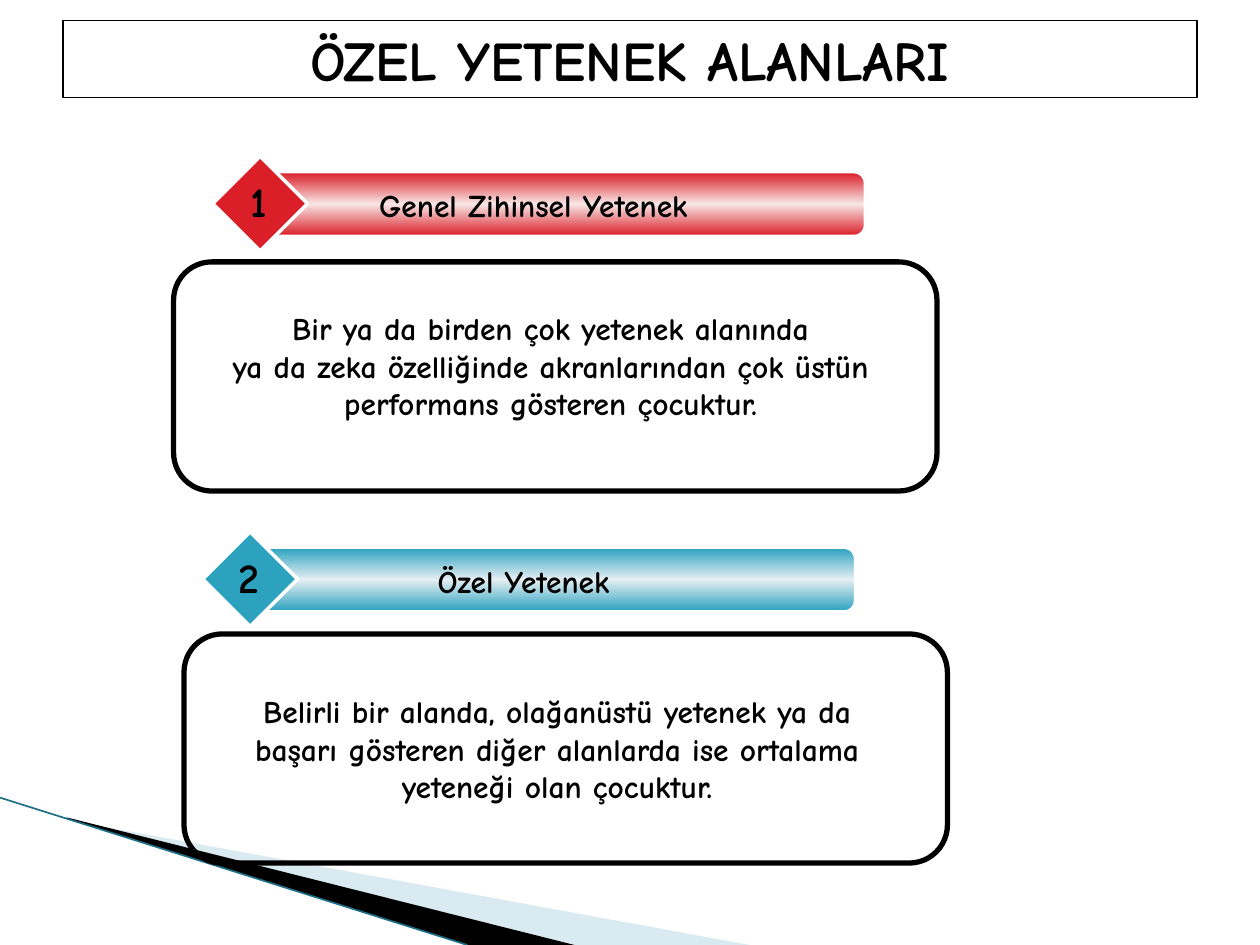
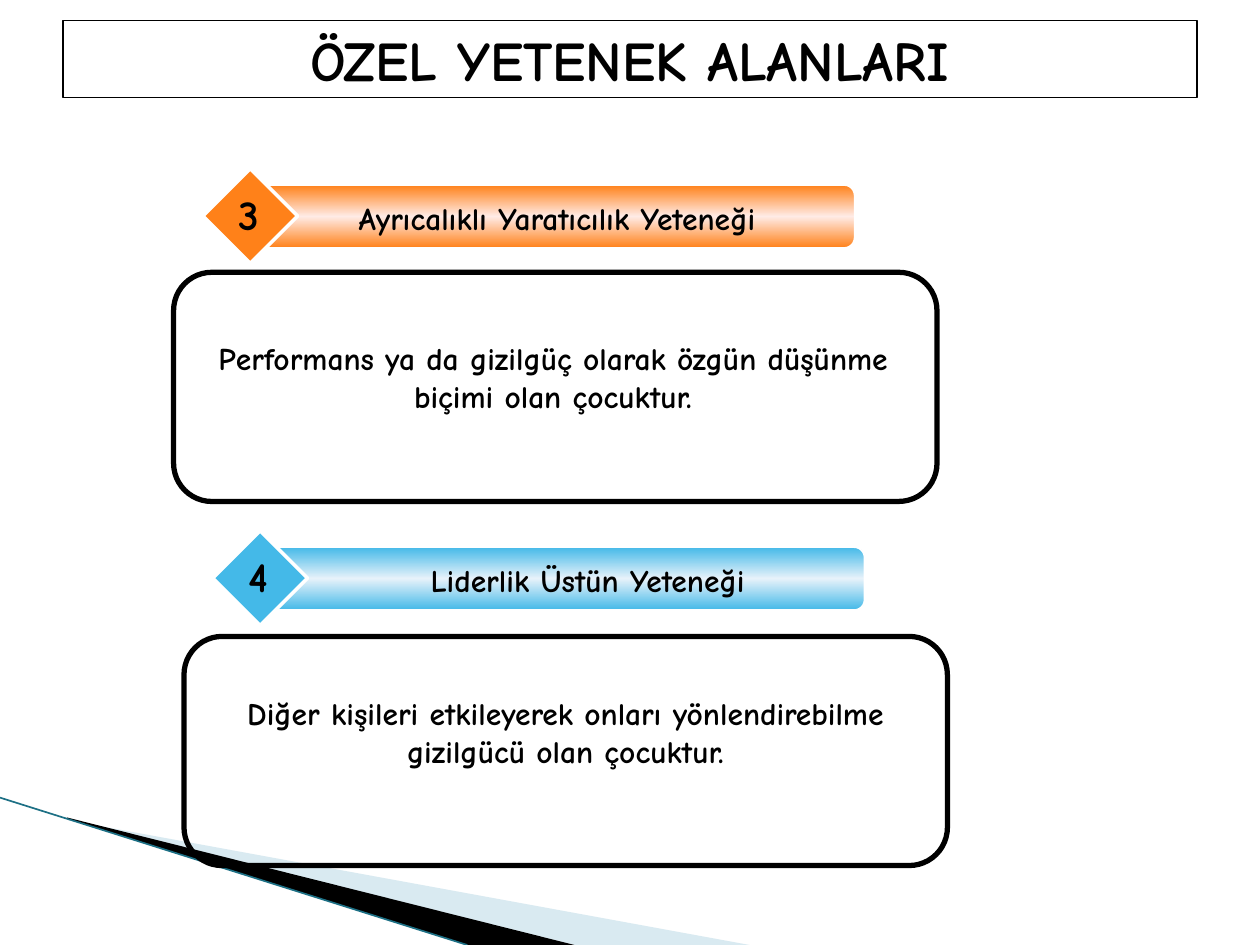
from copy import deepcopy

from lxml.etree import SubElement
from pptx import Presentation
from pptx.dml.color import RGBColor
from pptx.enum.shapes import MSO_CONNECTOR as Connector, MSO_SHAPE as Preset
from pptx.enum.text import MSO_ANCHOR as Anchor, MSO_AUTO_SIZE as AutoSize, PP_ALIGN as Align
from pptx.oxml.ns import qn
from pptx.util import Cm, Pt

BLACK = RGBColor(0x00, 0x00, 0x00)
WHITE = RGBColor(0xFF, 0xFF, 0xFF)
RED, PALE_RED = RGBColor(0xDA, 0x1F, 0x28), RGBColor(0xF8, 0xE6, 0xE6)
TEAL, PALE_TEAL = RGBColor(0x2D, 0xA2, 0xBF), RGBColor(0xE6, 0xEF, 0xF3)
ORANGE, PALE_ORANGE = RGBColor(0xFF, 0x81, 0x19), RGBColor(0xFF, 0xEB, 0xE6)
SKY, PALE_SKY = RGBColor(0x44, 0xB9, 0xE8), RGBColor(0xE7, 0xF2, 0xFA)
MIST = RGBColor(0xA0, 0xCB, 0xDC)
DEEP_TEAL = RGBColor(0x1D, 0x70, 0x85)
FONT = "Comic Neue"

TITLE = "ÖZEL YETENEK ALANLARI"
SLIDES = [
    [
        dict(number="1", name="Genel Zihinsel Yetenek", name_width=9.53,
             colors=(RED, PALE_RED), badge=(4.29, 3.15), panel=(3.5, 5.28), text=(4.04, 6.1),
             description=["Bir ya da birden çok yetenek alanında",
                          "ya da zeka özelliğinde akranlarından çok üstün "
                          "performans gösteren çocuktur."]),
        dict(number="2", name="Özel Yetenek", name_width=9.53,
             colors=(TEAL, PALE_TEAL), badge=(4.09, 10.72), panel=(3.71, 12.78), text=(4.17, 13.82),
             description=["Belirli bir alanda, olağanüstü yetenek ya da başarı gösteren "
                          "diğer alanlarda ise ortalama yeteneği olan çocuktur."]),
    ],
    [
        dict(number="3", name="Ayrıcalıklı Yaratıcılık Yeteneği ", name_width=11.1,
             colors=(ORANGE, PALE_ORANGE), badge=(4.09, 3.4), panel=(3.5, 5.49), text=(4.09, 6.71),
             description=["Performans ya da gizilgüç olarak özgün düşünme "
                          "biçimi olan çocuktur."]),
        dict(number="4", name="Liderlik Üstün Yeteneği", name_width=11.71,
             colors=(SKY, PALE_SKY), badge=(4.29, 10.7), panel=(3.71, 12.83), text=(4.34, 13.87),
             description=["Diğer kişileri etkileyerek onları yönlendirebilme "
                          "gizilgücü olan çocuktur."]),
    ],
]
MIST_WEDGE = [(1.4, 16.54), (15.11, 19.05), (11.58, 19.05), (1.4, 16.51)]
BLACK_WEDGE = [(1.35, 16.48), (11.58, 19.05), (9.42, 19.05), (1.37, 16.51)]


def add_wedge(slide, corners, color):
    points = [(Cm(x), Cm(y)) for x, y in corners]
    builder = slide.shapes.build_freeform(*points[0])
    builder.add_line_segments(points[1:])
    wedge = builder.convert_to_shape()
    wedge.shadow.inherit = False
    wedge.fill.solid()
    wedge.fill.fore_color.rgb = color
    wedge.line.fill.background()
    return wedge


def add_swoosh(slide):
    mist = add_wedge(slide, MIST_WEDGE, MIST)
    tint = mist._element.spPr.find(qn("a:solidFill"))[0]
    SubElement(tint, qn("a:alpha"), val="40000")
    add_wedge(slide, BLACK_WEDGE, BLACK)
    edge = slide.shapes.add_connector(Connector.STRAIGHT, 0, Cm(16.08), Cm(9.42), Cm(19.05))
    edge.line.color.rgb = DEEP_TEAL
    edge.line.width = Pt(0.95)
    SubElement(edge._element.spPr, qn("a:effectLst"))


def add_outlined(slide, preset, left, top, width, height, line_color, line_width):
    outlined = slide.shapes.add_shape(preset, Cm(left), Cm(top), Cm(width), Cm(height))
    outlined.shadow.inherit = False
    outlined.line.color.rgb = line_color
    outlined.line.width = Pt(line_width)
    return outlined


def write(frame, lines, size):
    frame.text = "\n".join(lines)
    for paragraph in frame.paragraphs:
        paragraph.alignment = Align.CENTER
        font = paragraph.font
        font.name, font.size, font.bold = FONT, Pt(size), True
        font.color.rgb = BLACK


def add_text(slide, left, top, width, height, lines, size, wrap=True):
    frame = slide.shapes.add_textbox(Cm(left), Cm(top), Cm(width), Cm(height)).text_frame
    frame.word_wrap = wrap
    frame.auto_size = AutoSize.SHAPE_TO_FIT_TEXT
    write(frame, lines, size)


def fill_sheen(bar, color, pale):
    bar.fill.gradient()
    bar.fill.gradient_angle = 90
    stop_list = bar._element.spPr.find(qn("a:gradFill")).find(qn("a:gsLst"))
    stop_list.append(deepcopy(stop_list[-1]))
    for stop, position, shade in zip(bar.fill.gradient_stops, (0, 0.5, 1), (color, pale, color)):
        stop.position = position
        stop.color.rgb = shade


def add_talent(slide, talent):
    left, top = talent["badge"]
    color, pale = talent["colors"]
    bar = add_outlined(slide, Preset.ROUNDED_RECTANGLE, left + 1.07, top + 0.33, 12.07, 1.27, WHITE, 1)
    fill_sheen(bar, color, pale)
    badge = add_outlined(slide, Preset.DIAMOND, left, top, 1.91, 1.91, WHITE, 2)
    badge.fill.solid()
    badge.fill.fore_color.rgb = color
    add_text(slide, left + 1.7, top + 0.48, talent["name_width"], 1.02, [talent["name"]], 18)
    add_text(slide, left + 0.41, top + 0.27, 1.02, 1.27, [talent["number"]], 24, wrap=False)
    panel = add_outlined(slide, Preset.ROUNDED_RECTANGLE, *talent["panel"], 15.39, 4.62, BLACK, 3)
    panel.fill.background()
    description = talent["description"]
    add_text(slide, *talent["text"], 14.12, 2.54, description, 18)


def set_title(slide):
    title = slide.shapes.title
    title.left, title.top, title.width, title.height = Cm(1.27), Cm(0.41), Cm(22.86), Cm(1.55)
    title.fill.solid()
    title.fill.fore_color.rgb = WHITE
    title.line.color.rgb = BLACK
    title.line.width = Pt(0.75)
    title.text_frame.auto_size = AutoSize.NONE
    title.text_frame.vertical_anchor = Anchor.MIDDLE
    write(title.text_frame, [TITLE], 32)


def main():
    """Build the slides on areas of special talent."""
    deck = Presentation()
    deck.slide_width, deck.slide_height = Cm(25.4), Cm(19.05)
    for talents in SLIDES:
        slide = deck.slides.add_slide(deck.slide_layouts.get_by_name("Title Only"))
        set_title(slide)
        add_swoosh(slide)
        for talent in talents:
            add_talent(slide, talent)
    deck.save("out.pptx")


if __name__ == "__main__":
    main()
